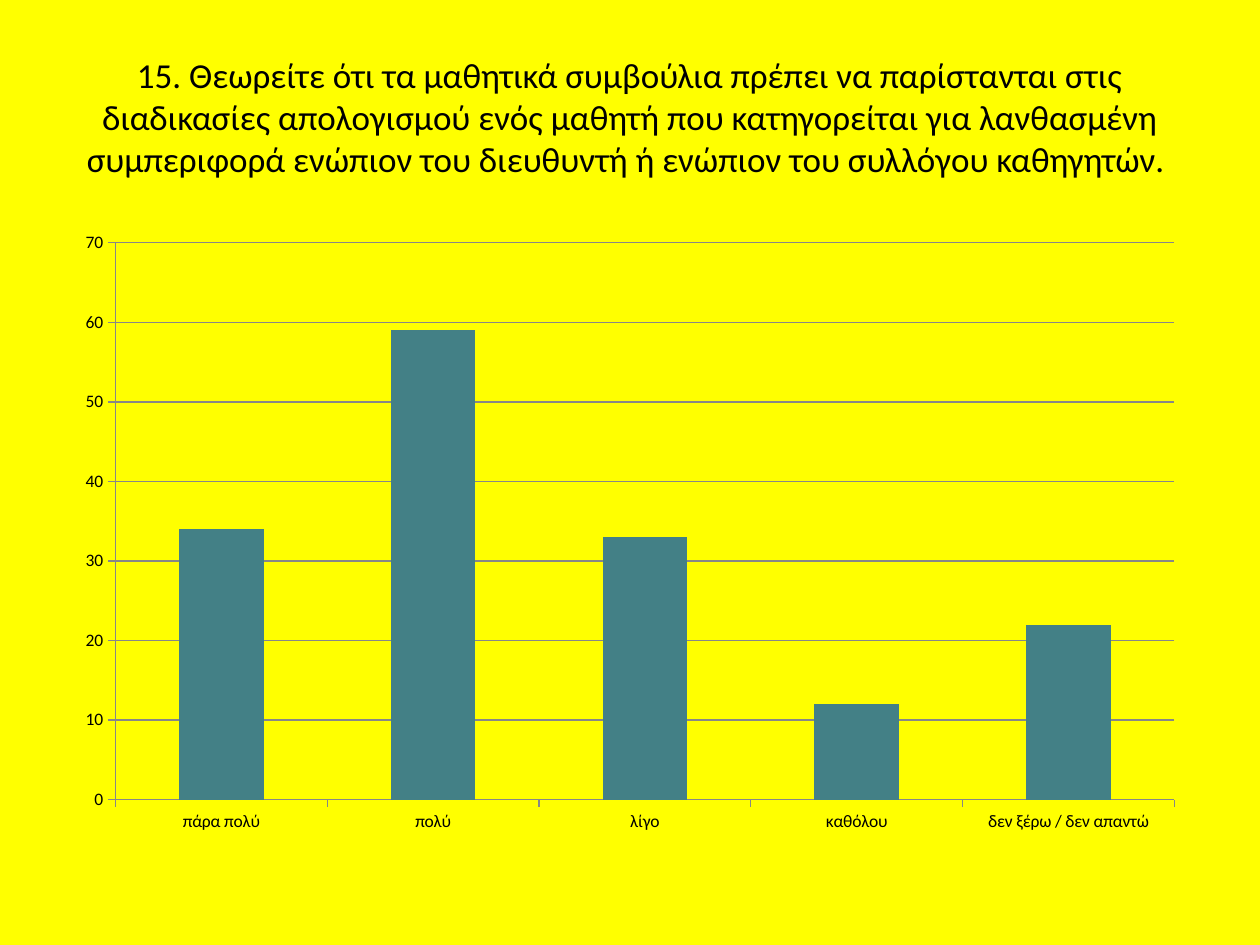
import dataclasses

import pptx
import pptx.chart.data
import pptx.dml.color
import pptx.enum.chart
import pptx.enum.text
import pptx.util

Pt = pptx.util.Pt


@dataclasses.dataclass(frozen=True)
class Theme:
    font: str = "Calibri"
    background: str = "FFFF00"
    ink: str = "000000"
    bar: str = "438086"
    rule: str = "878787"
    title_size: int = 20
    chart_size: int = 10
    rule_width: float = 0.75


class SlideBuilder:
    def __init__(self, slide, theme):
        self.slide = slide
        self.theme = theme

    def color(self, value):
        return pptx.dml.color.RGBColor.from_string(value)

    def fill(self, target, value):
        target.fill.solid()
        target.fill.fore_color.rgb = self.color(value)

    def style_font(self, font, size):
        font.name = self.theme.font
        font.size = Pt(size)
        font.bold = False
        font.color.rgb = self.color(self.theme.ink)

    def style_line(self, line):
        line.color.rgb = self.color(self.theme.rule)
        line.width = Pt(self.theme.rule_width)

    def background(self):
        self.fill(self.slide.background, self.theme.background)

    def title(self, wording, left, top, width, height):
        heading = self.slide.shapes.title
        heading.left, heading.top = Pt(left), Pt(top)
        heading.width, heading.height = Pt(width), Pt(height)
        frame = heading.text_frame
        frame.word_wrap = True
        frame.auto_size = pptx.enum.text.MSO_AUTO_SIZE.NONE
        frame.vertical_anchor = pptx.enum.text.MSO_ANCHOR.MIDDLE
        paragraph = frame.paragraphs[0]
        paragraph.alignment = pptx.enum.text.PP_ALIGN.CENTER
        run = paragraph.add_run()
        run.text = wording
        self.style_font(run.font, self.theme.title_size)

    def column_chart(self, answers, left, top, width, height):
        data = pptx.chart.data.CategoryChartData()
        data.categories = list(answers)
        data.add_series("Series 1", list(answers.values()))
        chart = self.slide.shapes.add_chart(
            pptx.enum.chart.XL_CHART_TYPE.COLUMN_CLUSTERED,
            Pt(left), Pt(top), Pt(width), Pt(height), data,
        ).chart
        chart.has_title = False
        chart.has_legend = False
        self.style_font(chart.font, self.theme.chart_size)
        plot = chart.plots[0]
        plot.vary_by_categories = False
        plot.gap_width = 150
        self.fill(plot.series[0].format, self.theme.bar)
        for axis in (chart.category_axis, chart.value_axis):
            axis.major_tick_mark = pptx.enum.chart.XL_TICK_MARK.OUTSIDE
            axis.minor_tick_mark = pptx.enum.chart.XL_TICK_MARK.NONE
            self.style_line(axis.format.line)
        scale = chart.value_axis
        scale.minimum_scale, scale.maximum_scale = 0, 70
        scale.major_unit = 10
        scale.has_major_gridlines = True
        self.style_line(scale.major_gridlines.format.line)


def main():
    deck = pptx.Presentation()
    deck.slide_width, deck.slide_height = Pt(720), Pt(540)
    builder = SlideBuilder(deck.slides.add_slide(deck.slide_layouts[5]), Theme())
    builder.background()
    builder.title(
        "15. Θεωρείτε ότι τα μαθητικά συμβούλια πρέπει να παρίστανται στις "
        "διαδικασίες απολογισμού ενός μαθητή που κατηγορείται για λανθασμένη "
        "συμπεριφορά ενώπιον του διευθυντή ή ενώπιον του συλλόγου καθηγητών. ",
        36, 21.6, 648, 90,
    )
    answers = {
        "πάρα πολύ": 34,
        "πολύ": 59,
        "λίγο": 33,
        "καθόλου": 12,
        "δεν ξέρω / δεν απαντώ": 22,
    }
    builder.column_chart(answers, 36, 126, 648, 356.4)
    deck.save("out.pptx")


if __name__ == "__main__":
    main()
